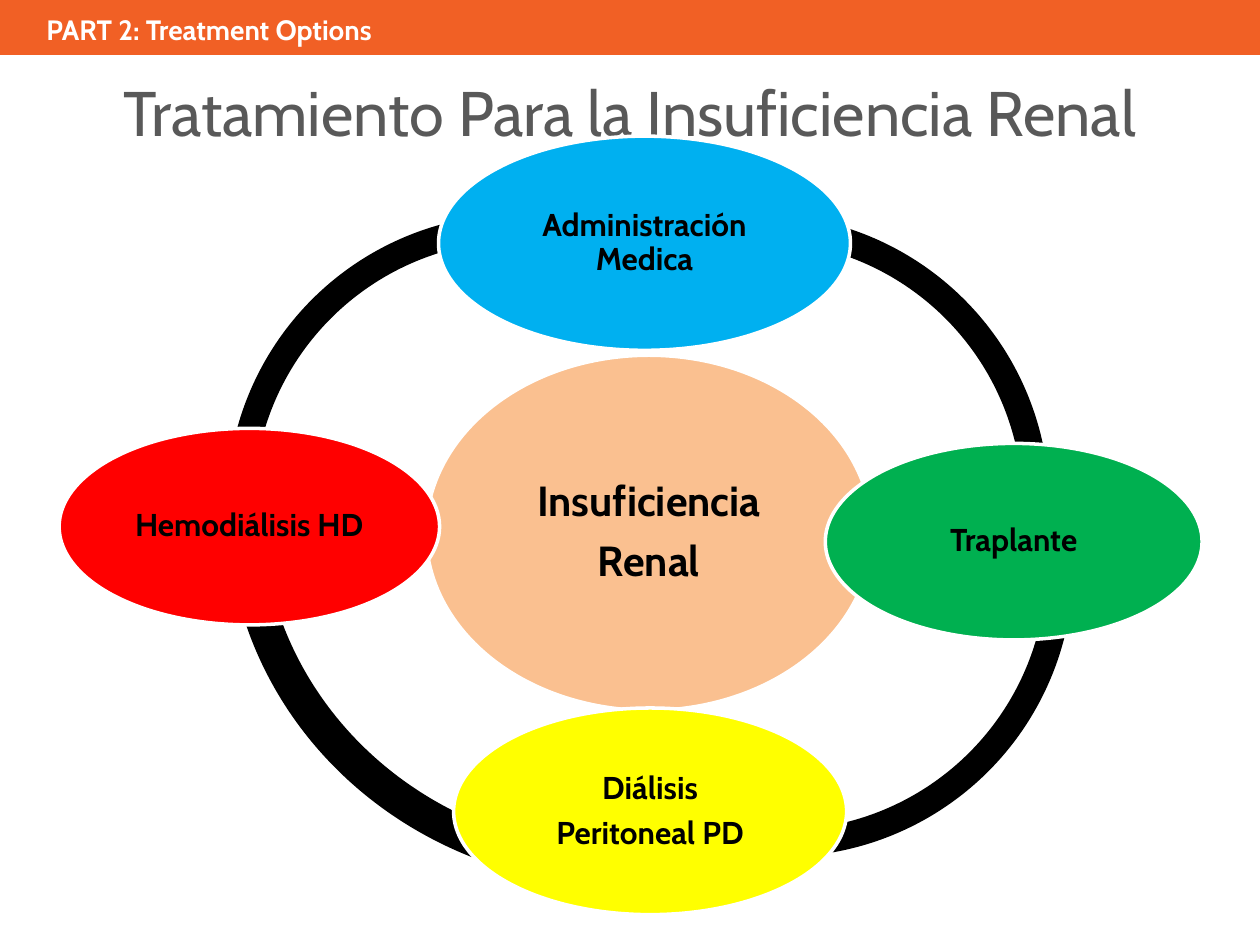
from pptx import Presentation
from pptx.dml.color import RGBColor
from pptx.enum.shapes import MSO_SHAPE as Shape
from pptx.enum.text import MSO_ANCHOR as Anchor, PP_ALIGN as Align
from pptx.util import Pt

ORANGE = RGBColor(0xF1, 0x60, 0x25)
GRAY = RGBColor(0x59, 0x59, 0x59)
PEACH = RGBColor(0xFA, 0xC0, 0x90)
BLUE = RGBColor(0x00, 0xB0, 0xF0)
GREEN = RGBColor(0x00, 0xB0, 0x50)
YELLOW = RGBColor(0xFF, 0xFF, 0x00)
RED = RGBColor(0xFF, 0x00, 0x00)
BLACK = RGBColor(0x00, 0x00, 0x00)
WHITE = RGBColor(0xFF, 0xFF, 0xFF)

ARCS = [
    (129.6, 122.4, 332.6, 332.6, 105.2, 175.96),
    (129.6, 74.9, 453.6, 431.3, 39.19, 111.15),
    (280.8, 157, 332.6, 332.6, 0.43, 63.66),
    (267.1, 122.4, 332.6, 332.6, 151.39, 3.41),
]
ARC_THICKNESS = 0.046

OVALS = [
    (243.4, 203, 254.9, 203, PEACH, 24, ["Insuficiencia", "Renal"]),
    (250.6, 77.8, 235.4, 122.4, BLUE, 18, ["Administración Medica"]),
    (471.6, 253.4, 215.3, 112.3, GREEN, 18, ["Traplante"]),
    (259.2, 404.6, 224.6, 118.1, YELLOW, 18, ["Diálisis", "Peritoneal PD"]),
    (33.8, 244.8, 217.4, 112.3, RED, 18, ["Hemodiálisis HD"]),
]


class SlideBuilder:
    font = "Cabin"

    def __init__(self, slide):
        self.s = slide

    def set_text(self, sp, lines, size, color, bold, align, inset=None):
        tf = sp.text_frame
        tf.word_wrap = True
        if inset is not None:
            tf.margin_left = tf.margin_right = Pt(inset)
            tf.margin_top = tf.margin_bottom = Pt(inset)
        tf.text = "\n".join(lines)
        for p in tf.paragraphs:
            p.alignment = align
            p.font.name = self.font
            p.font.size = Pt(size)
            p.font.bold = bold
            p.font.color.rgb = color
        return tf

    def shape(self, kind, x, y, w, h, fill, line=None):
        sp = self.s.shapes.add_shape(kind, Pt(x), Pt(y), Pt(w), Pt(h))
        sp.shadow.inherit = False
        sp.fill.solid()
        sp.fill.fore_color.rgb = fill
        if line is None:
            sp.line.fill.background()
        else:
            sp.line.color.rgb = line
            sp.line.width = Pt(2)
        return sp

    def title(self, text, x, y, w, h):
        sp = self.s.shapes.title
        sp.left, sp.top, sp.width, sp.height = Pt(x), Pt(y), Pt(w), Pt(h)
        tf = self.set_text(sp, [text], 36, GRAY, False, Align.CENTER, 0)
        tf.vertical_anchor = Anchor.TOP

    def label(self, text, x, y, w, h):
        sp = self.s.shapes.add_textbox(Pt(x), Pt(y), Pt(w), Pt(h))
        self.set_text(sp, [text], 16, WHITE, True, Align.RIGHT)

    def arc(self, x, y, w, h, start, end):
        sp = self.shape(Shape.BLOCK_ARC, x, y, w, h, BLACK)
        for i, value in enumerate((start, end, ARC_THICKNESS)):
            sp.adjustments[i] = value

    def oval(self, x, y, w, h, fill, size, lines):
        sp = self.shape(Shape.OVAL, x, y, w, h, fill, WHITE)
        tf = self.set_text(sp, lines, size, BLACK, True, Align.CENTER, 2)
        tf.vertical_anchor = Anchor.MIDDLE
        for p in tf.paragraphs:
            p.line_spacing = 0.9
            p.space_after = Pt(size * 0.35)


def main():
    prs = Presentation()
    prs.slide_width, prs.slide_height = Pt(720), Pt(540)
    b = SlideBuilder(prs.slides.add_slide(prs.slide_layouts[5]))
    b.shape(Shape.RECTANGLE, 0, 0, 720, 30.2, ORANGE, ORANGE)
    b.label("PART 2: Treatment Options", 0.7, 3.6, 218.9, 26.6)
    b.title("Tratamiento Para la Insuficiencia Renal", 36, 41.8, 648, 69.8)
    for arc in ARCS:
        b.arc(*arc)
    for oval in OVALS:
        b.oval(*oval)
    prs.save("out.pptx")


if __name__ == "__main__":
    main()
